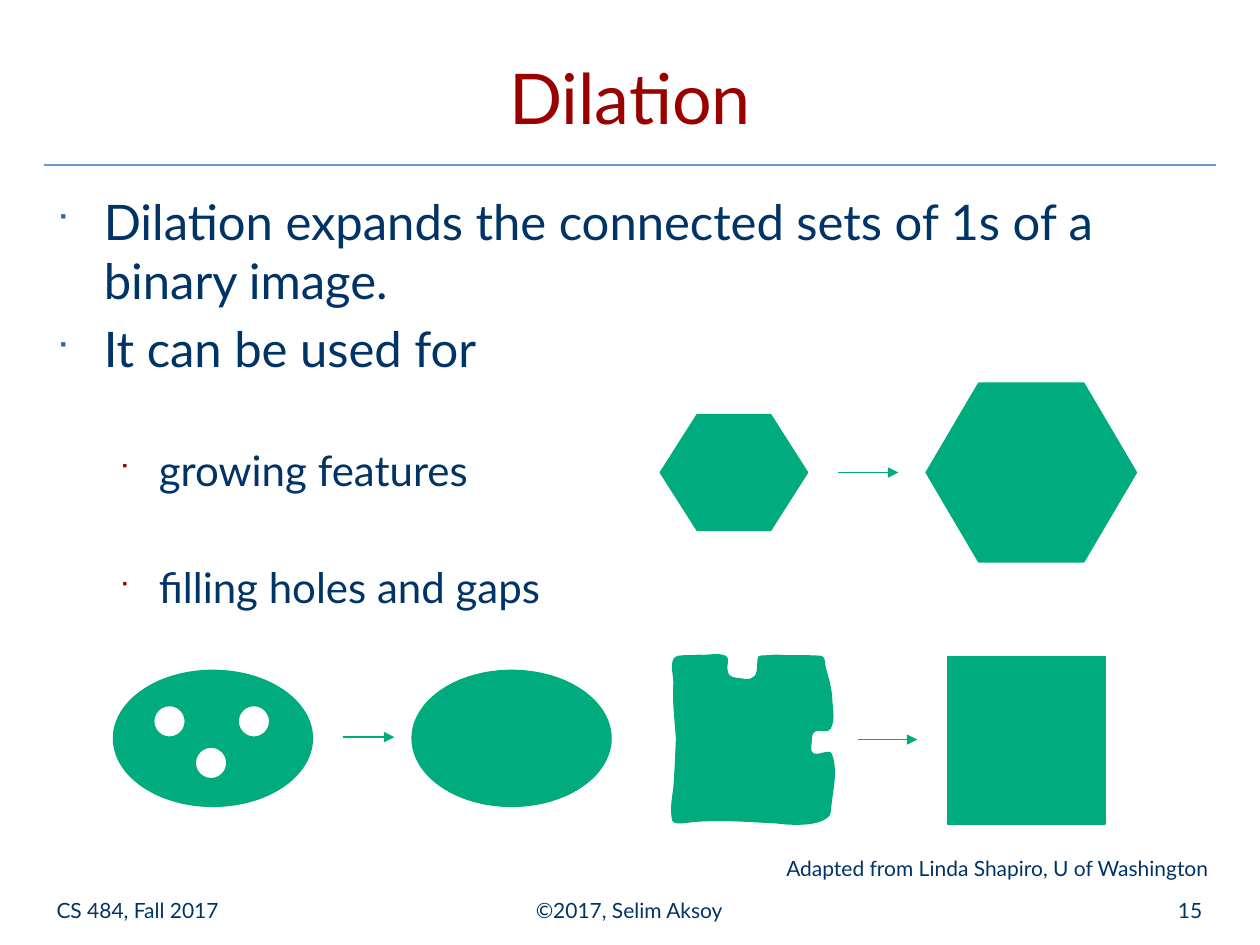
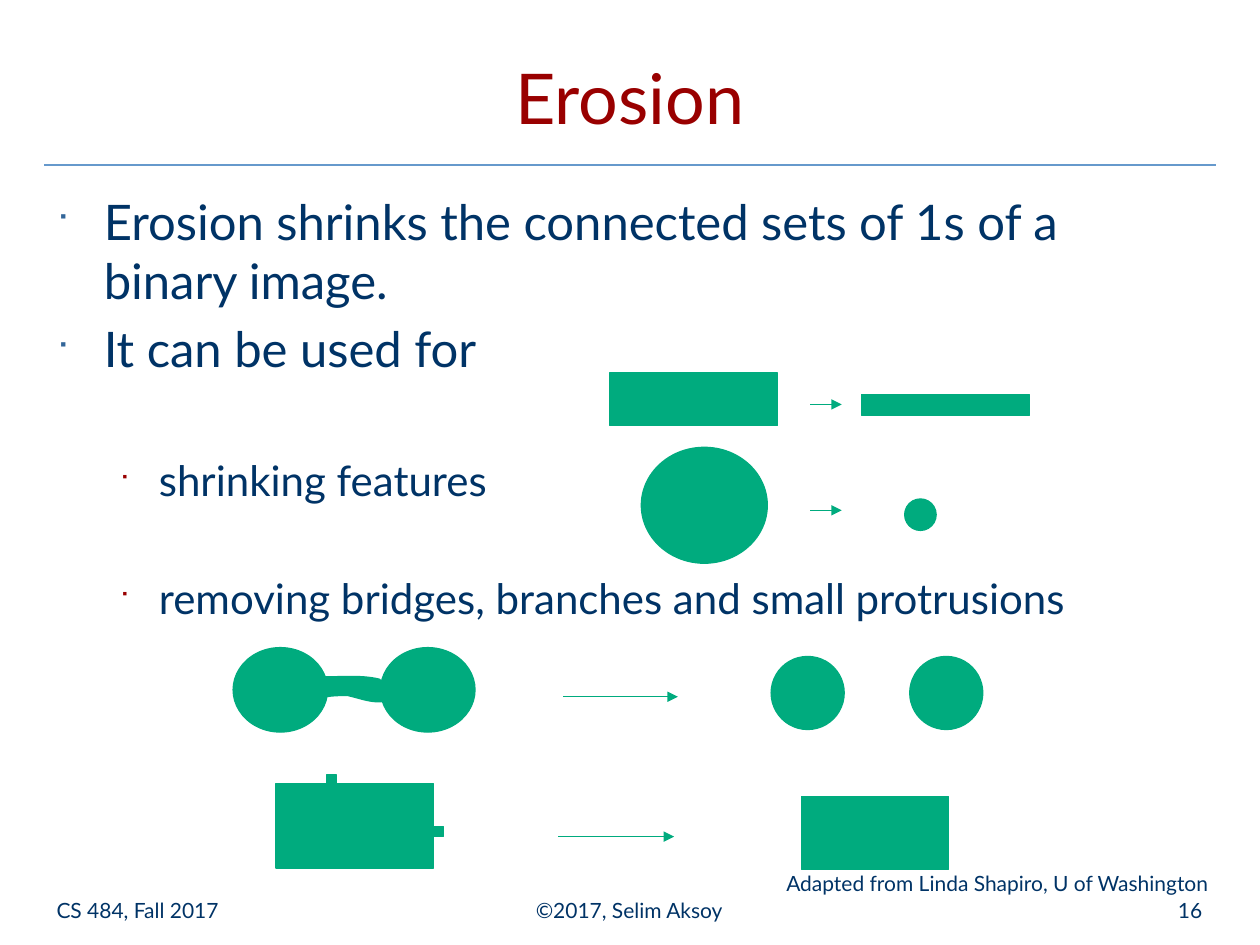
from lxml.etree import SubElement as Sub
from pptx import Presentation
from pptx.dml.color import RGBColor as Rgb
from pptx.enum.shapes import MSO_CONNECTOR as Conn, MSO_SHAPE as Form
from pptx.enum.text import MSO_ANCHOR as Anchor, PP_ALIGN as Align
from pptx.oxml.ns import qn
from pptx.util import Inches, Pt

HUE = {"title": "990000", "text": "003366", "mark": "336699",
       "rule": "6699CC", "green": "00AB7E", "white": "FFFFFF"}
FONT = "Lato"

deck = Presentation()
deck.slide_width, deck.slide_height = Inches(10), Inches(7.5)
# The grid has 1000 columns and 750 rows of square cells
CELL = deck.slide_width / 1000


def write(slide, at, text, size=12, hue="text", align=Align.LEFT, anchor=Anchor.BOTTOM):
    """Add a text box with one paragraph per line of text."""
    frame = slide.shapes.add_textbox(*[int(n * CELL) for n in at]).text_frame
    frame.word_wrap = True
    frame.vertical_anchor = anchor
    frame.text = text
    for para in frame.paragraphs:
        para.alignment = align
        para.font.name = FONT
        para.font.size = Pt(size)
        para.font.color.rgb = Rgb.from_string(HUE[hue])
    return frame


def stroke(slide, ends, hue, head=False):
    """Add a thin straight line, with an arrowhead if wanted."""
    line = slide.shapes.add_connector(Conn.STRAIGHT, *[int(n * CELL) for n in ends])
    line.line.color.rgb = Rgb.from_string(HUE[hue])
    line.line.width = Pt(0.75)
    Sub(line._element.spPr, qn("a:effectLst"))
    if head:
        Sub(line.line._get_or_add_ln(), qn("a:tailEnd"), type="triangle")


# Bullet levels: text size, indent, hanging part, mark hue, mark size
LEVELS = [(28, 37.5, 37.5, "mark", "60000"), (24, 81.25, 31.25, "title", "55000")]

# Curved outlines: a start point, then two handles and an end per curve
PUZZLE = (555, 520), [
    (561, 521, 569, 518, 576, 521), (579, 523, 576, 528, 577, 532),
    (578, 539, 583, 538, 589, 539), (594, 540, 596, 540, 600, 536),
    (600, 535, 601, 534, 601, 533), (603, 517, 598, 522, 616, 520),
    (628, 521, 640, 520, 652, 521), (655, 522, 654, 527, 655, 530),
    (656, 535, 656, 535, 658, 541), (659, 545, 660, 552, 660, 552),
    (660, 561, 663, 570, 659, 578), (657, 582, 650, 578, 647, 580),
    (644, 581, 644, 586, 644, 586), (644, 590, 642, 596, 645, 598),
    (649, 601, 659, 594, 660, 599), (665, 613, 660, 629, 659, 644),
    (659, 645, 659, 646, 658, 647), (649, 658, 616, 653, 616, 653),
    (593, 652, 573, 650, 550, 652), (548, 652, 535, 655, 534, 651),
    (532, 642, 534, 633, 535, 625), (536, 612, 537, 586, 537, 586),
    (536, 572, 534, 557, 535, 542), (535, 535, 531, 523, 538, 521),
    (544, 520, 549, 521, 555, 520)]
BRIDGE = (249, 537), [
    (266, 538, 284, 535, 301, 539), (303, 539, 303, 546, 303, 546),
    (303, 549, 305, 553, 304, 556), (304, 557, 302, 557, 301, 557),
    (292, 557, 285, 554, 276, 552), (270, 552, 264, 552, 259, 553),
    (256, 553, 252, 555, 252, 555), (249, 547, 252, 557, 252, 547),
    (252, 544, 251, 540, 249, 537)]

HEX, OVAL, RECT = Form.HEXAGON, Form.OVAL, Form.RECTANGLE
PAGES = [
    dict(title="Dilation", page=15, credit=674, blob=PUZZLE,
         # Level, space before in points, text
         items=[(0, 0, "Dilation expands the connected sets of 1s of a binary image."),
                (0, 5.5, "It can be used for"),
                (1, 38, "growing features"),
                (1, 38.4, "filling holes and gaps")],
         forms=[(HEX, 524, 329, 117, 92, 0.318), (HEX, 735, 304, 167, 142, 0.294),
                (RECT, 752, 521, 125, 133),
                (OVAL, 90, 532, 158, 108), (OVAL, 327, 532, 158, 108)],
         holes=[(122, 560), (189, 560), (155, 593)],
         arrows=[(665, 713, 375), (681, 728, 587), (272, 313, 585)]),
    dict(title="Erosion", page=16, credit=686, blob=BRIDGE,
         items=[(0, 0, "Erosion shrinks the connected sets of 1s of a binary image."),
                (0, 5.5, "It can be used for"),
                (1, 44, "shrinking features"),
                (1, 38.4, "removing bridges, branches and small protrusions")],
         forms=[(RECT, 484, 296, 133, 42), (RECT, 684, 313, 133, 17),
                (OVAL, 509, 355, 100, 92), (OVAL, 718, 396, 25, 25),
                (OVAL, 185, 514, 75, 67), (OVAL, 302, 514, 75, 67),
                (OVAL, 612, 521, 58, 58), (OVAL, 722, 521, 58, 58),
                (RECT, 219, 622, 125, 67), (RECT, 344, 656, 8, 8),
                (RECT, 259, 615, 8, 8), (RECT, 636, 632, 117, 58)],
         holes=[],
         arrows=[(643, 668, 321), (643, 668, 405), (447, 538, 553), (443, 535, 664)]),
]

for page in PAGES:
    slide = deck.slides.add_slide(deck.slide_layouts[6])

    # Title, rule and footers
    stroke(slide, (35, 131, 965, 131), "rule")
    for left, wide, text, align in [
            (35, 208, "CS 484, Fall 2017", Align.LEFT),
            (341, 317, "©2017, Selim Aksoy", Align.CENTER),
            (756, 208, str(page["page"]), Align.RIGHT)]:
        write(slide, (left, 702, wide, 35), text, align=align)
    write(slide, (35, 21, 930, 94), page["title"], 40, "title", Align.CENTER)

    # Bulleted text
    body = write(slide, (35, 147, 929, 543), "\n".join(i[2] for i in page["items"]),
                 anchor=Anchor.TOP)
    for para, (level, gap, _) in zip(body.paragraphs, page["items"]):
        size, left, hang, hue, scale = LEVELS[level]
        para.level = level
        para.font.size = Pt(size)
        para.space_before = Pt(gap)
        prop = para._p.get_or_add_pPr()
        prop.set("marL", str(int(left * CELL)))
        prop.set("indent", str(int(-hang * CELL)))
        font = prop.find(qn("a:defRPr"))
        Sub(Sub(prop, qn("a:buClr")), qn("a:srgbClr"), val=HUE[hue])
        Sub(prop, qn("a:buSzPct"), val=scale)
        Sub(prop, qn("a:buFont"), typeface="Wingdings", charset="2")
        Sub(prop, qn("a:buChar"), char="■")
        prop.append(font)

    # Curved outline: every three straight steps become one curve
    start, curves = page["blob"]
    dots = [spot for c in curves for spot in zip(c[::2], c[1::2])]
    pen = slide.shapes.build_freeform(*[int(n * CELL) for n in start])
    pen.add_line_segments([(int(x * CELL), int(y * CELL)) for x, y in dots])
    blob = pen.convert_to_shape()
    steps = list(blob._element.iter(qn("a:lnTo")))
    for first in range(0, len(dots), 3):
        trio = steps[first:first + 3]
        curve = trio[0].makeelement(qn("a:cubicBezTo"))
        trio[0].addprevious(curve)
        for step in trio:
            curve.append(step[0])
            step.getparent().remove(step)
    inks = [(blob, "green")]

    # Preset shapes, then the holes on top of them
    holes = [(OVAL, x, y, 25, 25) for x, y in page["holes"]]
    for kind, x, y, w, h, *bend in page["forms"] + holes:
        form = slide.shapes.add_shape(kind, *[int(n * CELL) for n in (x, y, w, h)])
        if bend:
            form.adjustments[0] = bend[0]
        inks.append((form, "white" if (kind, x, y, w, h) in holes else "green"))
    for form, hue in inks:
        form.shadow.inherit = False
        form.fill.solid()
        form.fill.fore_color.rgb = Rgb.from_string(HUE[hue])
        form.line.color.rgb = Rgb.from_string(HUE["green"])
        form.line.width = Pt(0.75)

    # Arrows from before to after
    for x, end, y in page["arrows"]:
        stroke(slide, (x, y, end, y), "green", head=True)

    # Credit
    write(slide, (594, page["credit"], 375, 30),
          "Adapted from Linda Shapiro, U of Washington", align=Align.RIGHT, anchor=Anchor.TOP)

deck.save("out.pptx")
